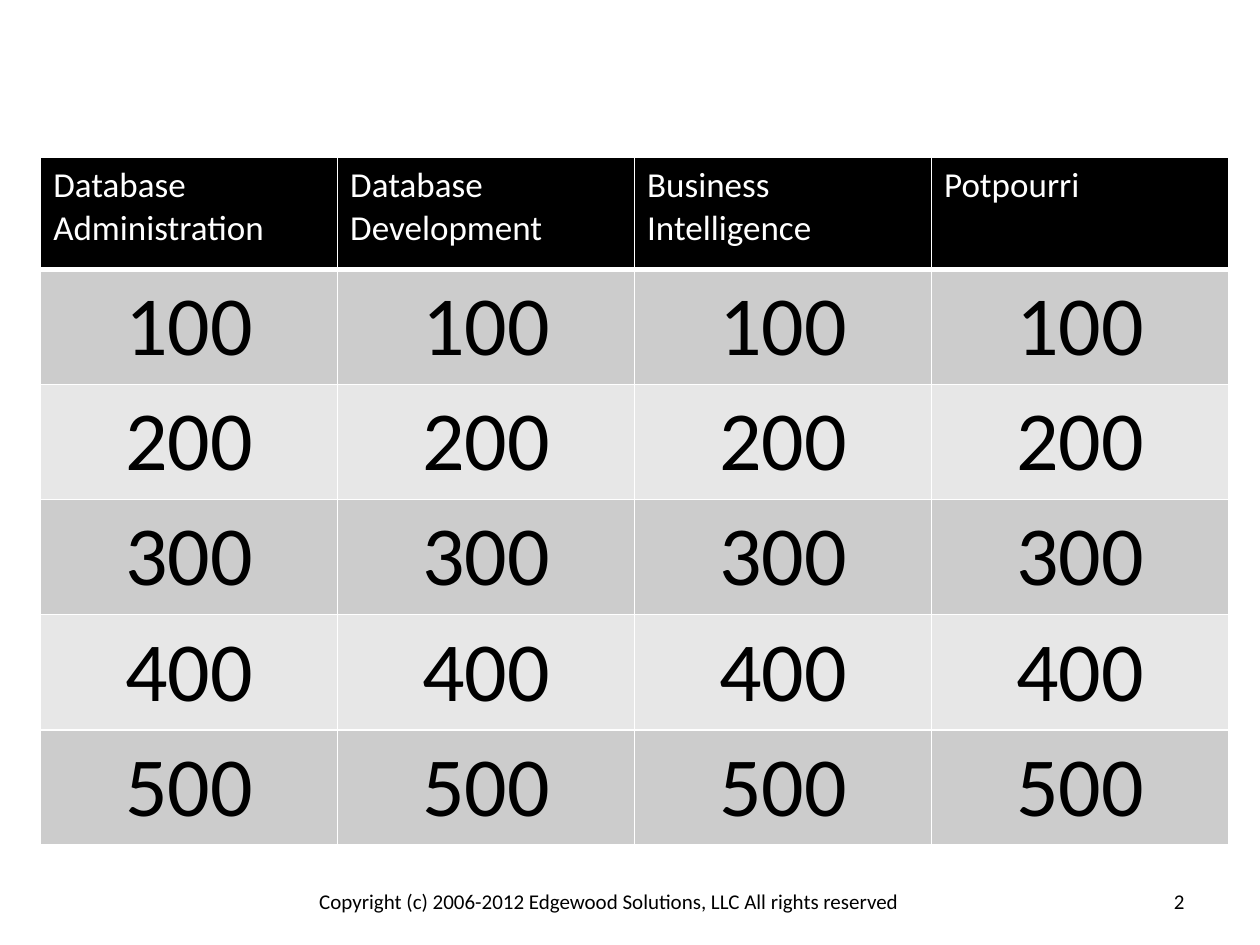
from dataclasses import dataclass

import lxml.etree
import pptx
import pptx.dml.color
import pptx.enum.text
import pptx.oxml.ns
import pptx.util

Pt = pptx.util.Pt
RGB = pptx.dml.color.RGBColor.from_string
ALIGN = pptx.enum.text.PP_ALIGN
ANCHOR = pptx.enum.text.MSO_ANCHOR


@dataclass(frozen=True)
class Theme:
    font: str = "Calibri"
    black: str = "000000"
    white: str = "FFFFFF"
    bands: tuple[str, str] = ("CCCCCC", "E7E7E7")
    header_size: float = 20
    points_size: float = 48
    footer_size: float = 12


@dataclass(frozen=True)
class FooterItem:
    text: str
    left: float
    width: float
    align: ALIGN


THEME = Theme()
CATEGORIES = ["Database Administration", "Database Development",
              "Business Intelligence", "Potpourri"]
POINTS = [100, 200, 300, 400, 500]
COLUMN_WIDTH, HEADER_HEIGHT, ROW_HEIGHT = 169.7, 63.9, 65.75
FOOTER_TOP, FOOTER_HEIGHT = 500.5, 28.75
FOOTER = [
    FooterItem("Copyright (c) 2006-2012 Edgewood Solutions, LLC All rights reserved",
               36, 624, ALIGN.CENTER),
    FooterItem("2", 516, 168, ALIGN.RIGHT),
]


def write(tf, text: str, *, size: float, color: str = THEME.black,
          align: ALIGN = ALIGN.LEFT) -> None:
    """Put one formatted paragraph into a text frame."""
    tf.word_wrap = True
    p = tf.paragraphs[0]
    p.alignment = align
    r = p.add_run()
    r.text = text
    r.font.name = THEME.font
    r.font.size = Pt(size)
    r.font.bold = False
    r.font.color.rgb = RGB(color)


def add_borders(cell, top: float, bottom: float) -> None:
    """Give a cell white borders, with the widths of top and bottom in points."""
    qn = pptx.oxml.ns.qn
    tc_pr = cell._tc.get_or_add_tcPr()
    for side, width in (("L", 1), ("R", 1), ("T", top), ("B", bottom)):
        ln = lxml.etree.SubElement(tc_pr, qn(f"a:ln{side}"), w=str(Pt(width)))
        fill = lxml.etree.SubElement(ln, qn("a:solidFill"))
        lxml.etree.SubElement(fill, qn("a:srgbClr"), val=THEME.white)


def fill_cell(cell, text: str, fill: str, *, top: float = 1, bottom: float = 1,
              **text_format) -> None:
    add_borders(cell, top, bottom)
    cell.fill.solid()
    cell.fill.fore_color.rgb = RGB(fill)
    write(cell.text_frame, text, **text_format)


def add_board(s) -> None:
    """Draw the game board: a header row of categories over rows of points."""
    sp = s.shapes.add_table(
        len(POINTS) + 1, len(CATEGORIES), Pt(23.25), Pt(90),
        Pt(COLUMN_WIDTH * len(CATEGORIES)),
        Pt(HEADER_HEIGHT + ROW_HEIGHT * len(POINTS)))
    table = sp.table
    for column in table.columns:
        column.width = Pt(COLUMN_WIDTH)
    for i, row in enumerate(table.rows):
        row.height = Pt(ROW_HEIGHT if i else HEADER_HEIGHT)

    for col, category in enumerate(CATEGORIES):
        fill_cell(table.cell(0, col), category, THEME.black, bottom=3,
                  size=THEME.header_size, color=THEME.white)
        for i, points in enumerate(POINTS):
            fill_cell(table.cell(i + 1, col), str(points), THEME.bands[i % 2],
                      top=1 if i else 3, size=THEME.points_size,
                      align=ALIGN.CENTER)


def add_footer_item(s, item: FooterItem) -> None:
    sp = s.shapes.add_textbox(Pt(item.left), Pt(FOOTER_TOP),
                              Pt(item.width), Pt(FOOTER_HEIGHT))
    tf = sp.text_frame
    tf.vertical_anchor = ANCHOR.MIDDLE
    write(tf, item.text, size=THEME.footer_size, align=item.align)


def main() -> None:
    prs = pptx.Presentation()
    prs.slide_width, prs.slide_height = Pt(720), Pt(540)
    s = prs.slides.add_slide(prs.slide_layouts[6])
    s.background.fill.solid()
    s.background.fill.fore_color.rgb = RGB(THEME.white)

    # Game board
    add_board(s)

    # Copyright line and slide number
    for item in FOOTER:
        add_footer_item(s, item)

    prs.save("out.pptx")


if __name__ == "__main__":
    main()
